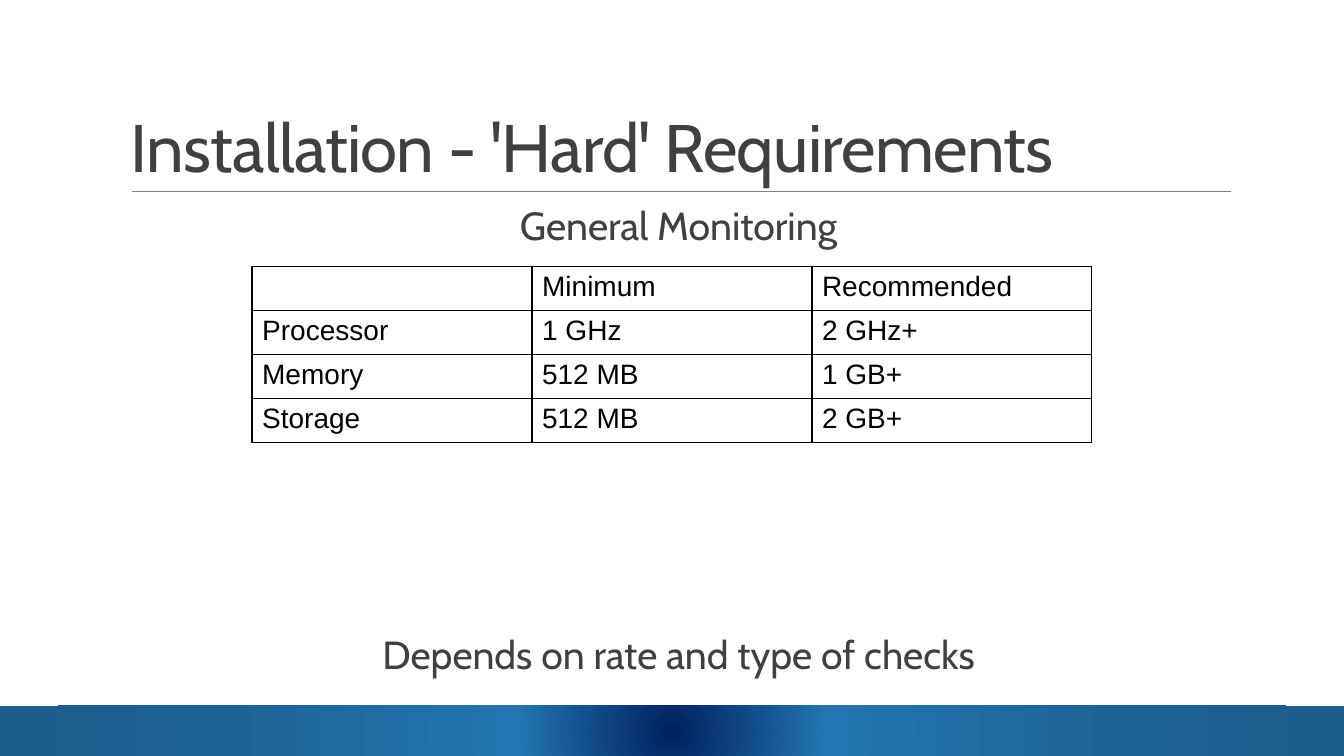
import pptx
import pptx.dml.color
import pptx.enum.shapes
import pptx.enum.text
import pptx.oxml
import pptx.oxml.ns
import pptx.util

Pt = pptx.util.Pt
RGB = pptx.dml.color.RGBColor.from_string
ALIGN = pptx.enum.text.PP_ALIGN
ANCHOR = pptx.enum.text.MSO_ANCHOR
NS = pptx.oxml.ns.nsdecls("a")

THEME = {
    "font": "Cabin", "cells": "Arial",
    "text": "404040", "ink": "000000", "rule": "808080",
    "title": 48, "body": 28, "cell": 20,
    "band": [(0, "002060"), (23, "2275B0"), (69, "1D6294"), (97, "1B5C8B")],
}

deck = pptx.Presentation()
deck.slide_width = pptx.util.Inches(13.33)
deck.slide_height = pptx.util.Inches(7.5)
wide, high = deck.slide_width, deck.slide_height
slide = deck.slides.add_slide(deck.slide_layouts[6])
shapes = slide.shapes


def write(para, text, font, size, color):
    """Add one styled run to a paragraph and return it."""
    run = para.add_run()
    run.text = text
    run.font.name = font
    run.font.size = Pt(size)
    run.font.color.rgb = RGB(color)
    return run


def add_box(left, top, width, height, anchor):
    """Add a wrapping text box, placed in inches, and return its frame."""
    place = [pptx.util.Inches(n) for n in (left, top, width, height)]
    frame = shapes.add_textbox(*place).text_frame
    frame.word_wrap = True
    frame.vertical_anchor = anchor
    return frame


# Footer band
deep = high // 15
band = shapes.add_shape(
    pptx.enum.shapes.MSO_SHAPE.RECTANGLE, 0, high - deep, wide, deep)
band.shadow.inherit = False
band.line.fill.background()
band.fill.background()
stops = "".join(
    f'<a:gs pos="{pos * 1000}"><a:srgbClr val="{color}"/></a:gs>'
    for pos, color in THEME["band"])
grad = pptx.oxml.parse_xml(
    f'<a:gradFill {NS} rotWithShape="1"><a:gsLst>{stops}</a:gsLst>'
    '<a:path path="circle">'
    '<a:fillToRect l="50000" t="50000" r="50000" b="50000"/>'
    '</a:path></a:gradFill>')
props = band.element.spPr
props.replace(props.find(pptx.oxml.ns.qn("a:noFill")), grad)

# Rule under the title
level = pptx.util.Inches(1.9)
rule = shapes.add_connector(
    pptx.enum.shapes.MSO_CONNECTOR.STRAIGHT,
    pptx.util.Inches(1.31), level, pptx.util.Inches(12.21), level)
rule.line.color.rgb = RGB(THEME["rule"])
rule.line.width = Pt(0.5)
rule.element.spPr.append(pptx.oxml.parse_xml(f"<a:effectLst {NS}/>"))

# Requirements table
rows = [
    ("", "Minimum", "Recommended"),
    ("Processor", "1 GHz", "2 GHz+"),
    ("Memory", "512 MB", "1 GB+"),
    ("Storage", "512 MB", "2 GB+"),
]
tall = pptx.util.Inches(0.436)
table = shapes.add_table(
    len(rows), len(rows[0]), pptx.util.Inches(2.5), pptx.util.Inches(2.64),
    pptx.util.Inches(8.33), tall * len(rows)).table
table.first_row = False
table.horz_banding = False
for r, row in enumerate(rows):
    for c, text in enumerate(row):
        cell = table.cell(r, c)
        para = cell.text_frame.paragraphs[0]
        if text:
            write(para, text, THEME["cells"], THEME["cell"], THEME["ink"])
        else:
            para.font.size = Pt(THEME["cell"])
        tail = cell._tc.get_or_add_tcPr()
        for side in ("lnL", "lnR", "lnT", "lnB"):
            tail.append(pptx.oxml.parse_xml(
                f'<a:{side} {NS} w="{Pt(1)}"><a:solidFill>'
                f'<a:srgbClr val="{THEME["ink"]}"/></a:solidFill></a:{side}>'))
        cell.fill.background()

# Title
para = add_box(1.2, 0.31, 11, 1.59, ANCHOR.BOTTOM).paragraphs[0]
para.line_spacing = 0.85
run = write(para, "Installation - 'Hard' Requirements",
            THEME["font"], THEME["title"], THEME["text"])
run.font._element.set("spc", "-50")

# Heading above the table and remark far below it
frame = add_box(1.23, 1.98, 11, 4.82, ANCHOR.MIDDLE)
lines = [("General Monitoring", 0),
         ("Depends on rate and type of checks", 276)]
for i, (text, gap) in enumerate(lines):
    para = frame.add_paragraph() if i else frame.paragraphs[0]
    para.alignment = ALIGN.CENTER
    para.line_spacing = 0.9
    para.space_before = Pt(gap)
    write(para, text, THEME["font"], THEME["body"], THEME["text"])

deck.save("out.pptx")
